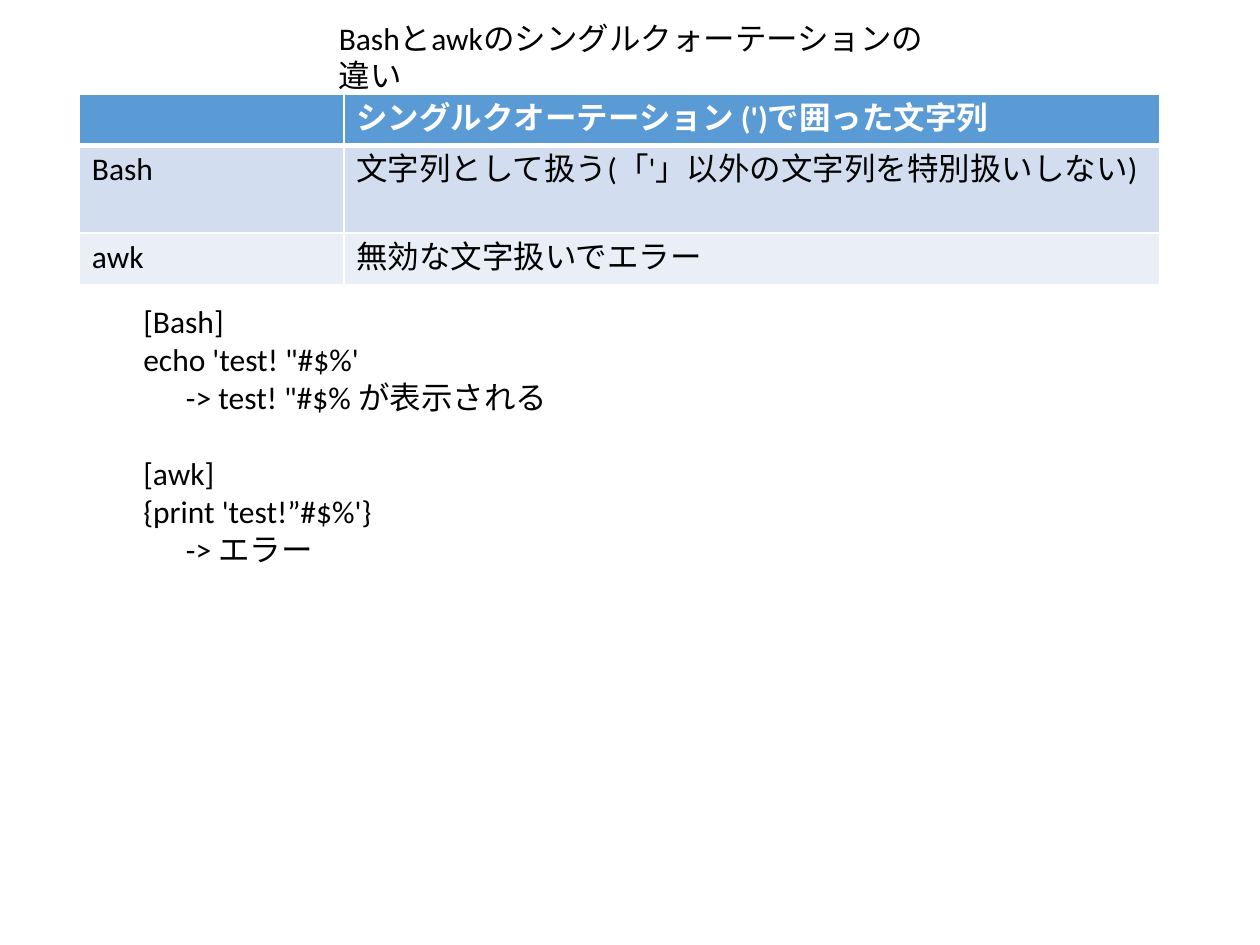
from dataclasses import dataclass

from lxml import etree
from pptx import Presentation
from pptx.dml.color import RGBColor
from pptx.enum import text
from pptx.oxml.ns import qn
from pptx.util import Cm, Pt


@dataclass(frozen=True)
class Theme:
    font: str = "Calibri"
    size: int = 18
    table_leading: float = 21.5
    ink: str = "000000"
    white: str = "FFFFFF"
    header: str = "5B9BD5"
    bands: tuple[str, str] = ("D2DEEF", "EAEFF7")
    border: int = 1
    header_border: int = 3


@dataclass(frozen=True)
class Line:
    text: str
    indent: float = 0
    before: int = 0


@dataclass(frozen=True)
class TextBlock:
    left: float
    top: float
    width: float
    height: float
    lines: tuple[Line, ...]


THEME = Theme()
RESULT_INDENT = 0.86
BLOCK_GAP = 22

BLOCKS = (
    TextBlock(6.58, 0.25, 12.8, 1.02, (Line("Bashとawkのシングルクォーテーションの違い"),)),
    TextBlock(2.64, 5.97, 12.8, 6.4, (
        Line("[Bash]"),
        Line("echo 'test! \"#$%'"),
        Line("-> test! \"#$% が表示される", RESULT_INDENT),
        Line("[awk]", before=BLOCK_GAP),
        Line("{print 'test!”#$%'}"),
        Line("-> エラー", RESULT_INDENT),
    )),
)

ROWS = (
    ("", "シングルクオーテーション (')で囲った文字列"),
    ("Bash", "文字列として扱う(「'」以外の文字列を特別扱いしない)"),
    ("awk", "無効な文字扱いでエラー"),
)
COLUMN_WIDTHS = (5.33, 16.44)
ROW_HEIGHT = 1.03


def style_runs(p, color: str, bold: bool = False) -> None:
    for r in p.runs:
        r.font.name = THEME.font
        r.font.size = Pt(THEME.size)
        r.font.bold = bold
        r.font.color.rgb = RGBColor.from_string(color)


def add_text_block(slide, block: TextBlock) -> None:
    sp = slide.shapes.add_textbox(
        Cm(block.left), Cm(block.top), Cm(block.width), Cm(block.height))
    tf = sp.text_frame
    tf.word_wrap = True
    tf.auto_size = text.MSO_AUTO_SIZE.SHAPE_TO_FIT_TEXT
    tf.text = "\n".join(line.text for line in block.lines)
    for p, line in zip(tf.paragraphs, block.lines):
        if line.indent:
            p_pr = p._p.get_or_add_pPr()
            p_pr.set("marL", str(Cm(line.indent)))
            p_pr.set("indent", "0")
        if line.before:
            p.space_before = Pt(line.before)
        style_runs(p, THEME.ink)


def set_borders(cell, top: int, bottom: int) -> None:
    """Draw the four white edges; call before filling the cell."""
    tc_pr = cell._tc.get_or_add_tcPr()
    widths = {"L": THEME.border, "R": THEME.border, "T": top, "B": bottom}
    for side, width in widths.items():
        ln = etree.SubElement(tc_pr, qn(f"a:ln{side}"), w=str(Pt(width)))
        fill = etree.SubElement(ln, qn("a:solidFill"))
        etree.SubElement(fill, qn("a:srgbClr"), val=THEME.white)


def add_comparison_table(slide) -> None:
    table = slide.shapes.add_table(
        len(ROWS), len(COLUMN_WIDTHS), Cm(1.6), Cm(1.9),
        Cm(sum(COLUMN_WIDTHS)), Cm(ROW_HEIGHT * len(ROWS))).table
    for column, width in zip(table.columns, COLUMN_WIDTHS):
        column.width = Cm(width)
    for i, (row, values) in enumerate(zip(table.rows, ROWS)):
        row.height = Cm(ROW_HEIGHT)
        is_header = i == 0
        background = THEME.header if is_header else THEME.bands[(i - 1) % 2]
        top = THEME.header_border if i == 1 else THEME.border
        bottom = THEME.header_border if is_header else THEME.border
        for cell, value in zip(row.cells, values):
            set_borders(cell, top, bottom)
            cell.fill.solid()
            cell.fill.fore_color.rgb = RGBColor.from_string(background)
            cell.text_frame.text = value
            p = cell.text_frame.paragraphs[0]
            p.line_spacing = Pt(THEME.table_leading)
            style_runs(p, THEME.white if is_header else THEME.ink, is_header)


def main() -> None:
    prs = Presentation()
    prs.slide_width, prs.slide_height = Cm(25.4), Cm(19.05)
    slide = prs.slides.add_slide(prs.slide_layouts[6])
    add_comparison_table(slide)
    for block in BLOCKS:
        add_text_block(slide, block)
    prs.save("out.pptx")


if __name__ == "__main__":
    main()
